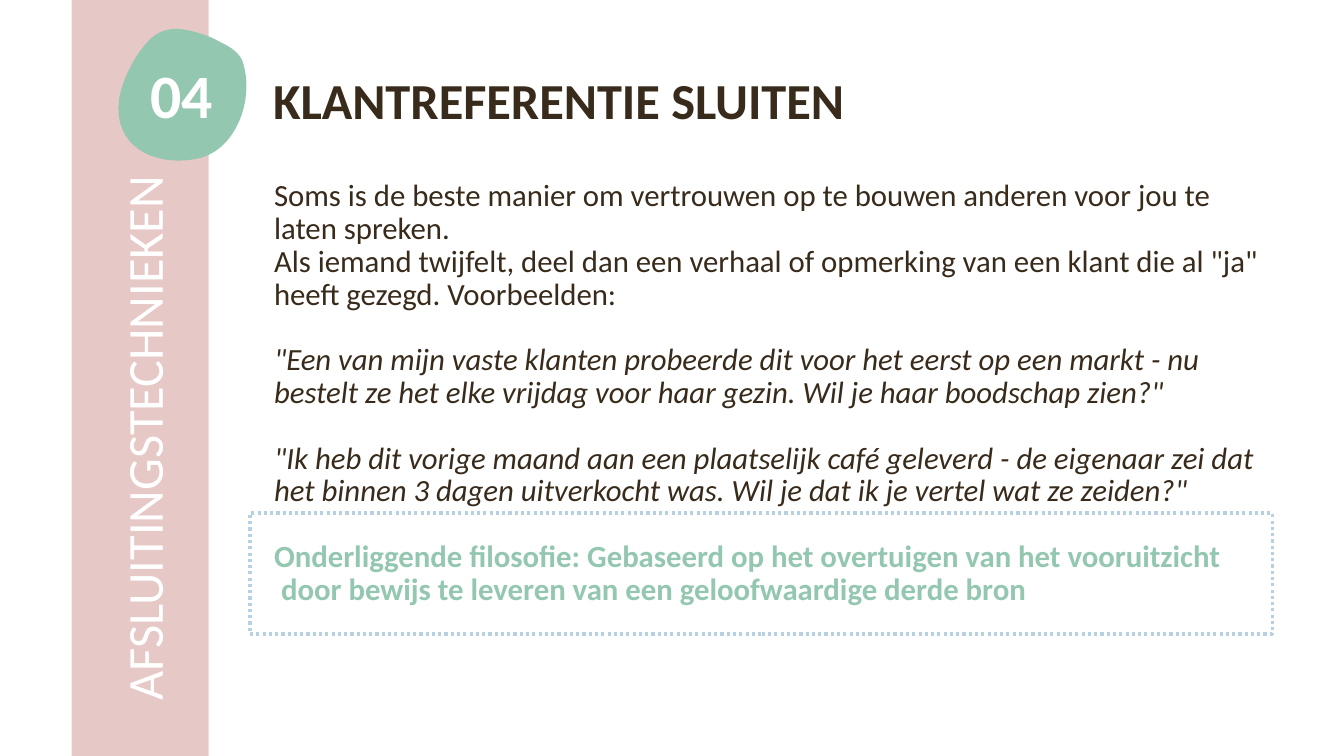
"""Build the slide on closing a sale with a customer reference."""
from pptx import Presentation, util as u
from pptx.dml.color import RGBColor
from pptx.enum import dml, shapes, text

FONT = "Calibri"
BROWN, GREEN, PINK, BLUE, WHITE = "382B1B", "94C7B0", "E6C8C7", "B6D1E1", "FFFFFF"
LINE_PITCH = u.Pt(23.4)

TITLE = "KLANTREFERENTIE SLUITEN"
CHAPTER = "AFSLUITINGSTECHNIEKEN"
NUMBER = "04"
PLAIN = {"color": BROWN}
QUOTE = {"color": BROWN, "italic": True}
PHILOSOPHY = {"color": GREEN, "bold": True}
BODY = [
    ("Soms is de beste manier om vertrouwen op te bouwen anderen voor jou te laten spreken.", PLAIN, False),
    ('Als iemand twijfelt, deel dan een verhaal of opmerking van een klant die al "ja" heeft gezegd. '
     "Voorbeelden:", PLAIN, False),
    ('"Een van mijn vaste klanten probeerde dit voor het eerst op een markt - nu bestelt ze het elke '
     'vrijdag voor haar gezin. Wil je haar boodschap zien?"', QUOTE, True),
    ('"Ik heb dit vorige maand aan een plaatselijk café geleverd - de eigenaar zei dat het binnen 3 dagen '
     'uitverkocht was. Wil je dat ik je vertel wat ze zeiden?"', QUOTE, True),
    ("Onderliggende filosofie: Gebaseerd op het overtuigen van het vooruitzicht", PHILOSOPHY, True),
    ("door bewijs te leveren van een geloofwaardige derde bron", PHILOSOPHY, False),
]
BLOB_START = (1.94, 0.32)
BLOB_CURVES = [
    ((1.77, 0.27), (1.6, 0.26), (1.46, 0.42)),
    ((1.33, 0.56), (1.21, 0.8), (1.18, 0.99)),
    ((1.12, 1.45), (1.52, 1.65), (1.93, 1.58)),
    ((2.33, 1.52), (2.53, 1), (2.41, 0.62)),
    ((2.37, 0.51), (2.27, 0.46), (2.17, 0.41)),
    ((2.1, 0.37), (2.02, 0.34), BLOB_START),
]
CURVE_STEPS = 16


def rgb(color):
    return RGBColor.from_string(color)


def style(paragraph, size, color, bold=False, italic=False, spacing=LINE_PITCH):
    paragraph.line_spacing = spacing
    for run in paragraph.runs:
        run.font.name, run.font.size = FONT, u.Pt(size)
        run.font.bold, run.font.italic = bold, italic
        run.font.color.rgb = rgb(color)


def add_text(slide, box, lines, size, anchor=text.MSO_ANCHOR.TOP, **look):
    label = slide.shapes.add_textbox(*map(u.Inches, box))
    frame = label.text_frame
    frame.word_wrap, frame.vertical_anchor = True, anchor
    frame.text = "\n".join(lines)
    for paragraph in frame.paragraphs:
        style(paragraph, size, **look)
    return label


def add_rectangle(slide, box):
    rectangle = slide.shapes.add_shape(shapes.MSO_SHAPE.RECTANGLE, *map(u.Inches, box))
    rectangle.shadow.inherit = False
    return rectangle


def fill(shape, color):
    shape.fill.solid()
    shape.fill.fore_color.rgb = rgb(color)
    shape.line.fill.background()


def curve_points(start, first, second, end):
    for step in range(1, CURVE_STEPS + 1):
        t = step / CURVE_STEPS
        s = 1 - t
        yield tuple(u.Inches(s**3 * a + 3 * s * s * t * b + 3 * s * t * t * c + t**3 * d)
                    for a, b, c, d in zip(start, first, second, end))


def add_blob(slide):
    outline, start = [], BLOB_START
    for curve in BLOB_CURVES:
        outline += curve_points(start, *curve)
        start = curve[-1]
    builder = slide.shapes.build_freeform(*map(u.Inches, BLOB_START))
    builder.add_line_segments(outline, close=True)
    blob = builder.convert_to_shape()
    blob.shadow.inherit = False
    fill(blob, GREEN)


def add_body(slide):
    body = add_text(slide, (2.62, 1.74, 10.03, 5.47), [line for line, _, _ in BODY], 22, color=BROWN)
    for paragraph, (_, look, gap) in zip(body.text_frame.paragraphs, BODY):
        style(paragraph, 22, **look)
        paragraph.space_before = LINE_PITCH if gap else u.Pt(0)
    paragraph._p.get_or_add_pPr().set("marL", str(u.Inches(0.07)))


def main():
    deck = Presentation()
    deck.slide_width, deck.slide_height = u.Inches(13.33), u.Inches(7.5)
    slide = deck.slides.add_slide(deck.slide_layouts[6])

    add_text(slide, (2.61, 0.63, 8.7, 0.79), [TITLE], 36, text.MSO_ANCHOR.MIDDLE,
             color=BROWN, bold=True, spacing=0.9)
    add_body(slide)
    fill(add_rectangle(slide, (0.71, 0, 1.36, 7.5)), PINK)
    chapter = add_text(slide, (-1.97, 2.77, 7.38, 1.17), [CHAPTER], 36, color=WHITE, spacing=0.9)
    chapter.rotation = 270

    frame = add_rectangle(slide, (2.48, 5.09, 10.14, 1.2))
    frame.fill.background()
    frame.line.color.rgb = rgb(BLUE)
    frame.line.width = u.Pt(2.25)
    frame.line.dash_style = dml.MSO_LINE.ROUND_DOT

    add_blob(slide)
    number = add_text(slide, (1.17, 0.92, 1.26, 1.05), [NUMBER], 44, color=WHITE, bold=True)
    number.text_frame.paragraphs[0].alignment = text.PP_ALIGN.CENTER
    deck.save("out.pptx")


if __name__ == "__main__":
    main()
